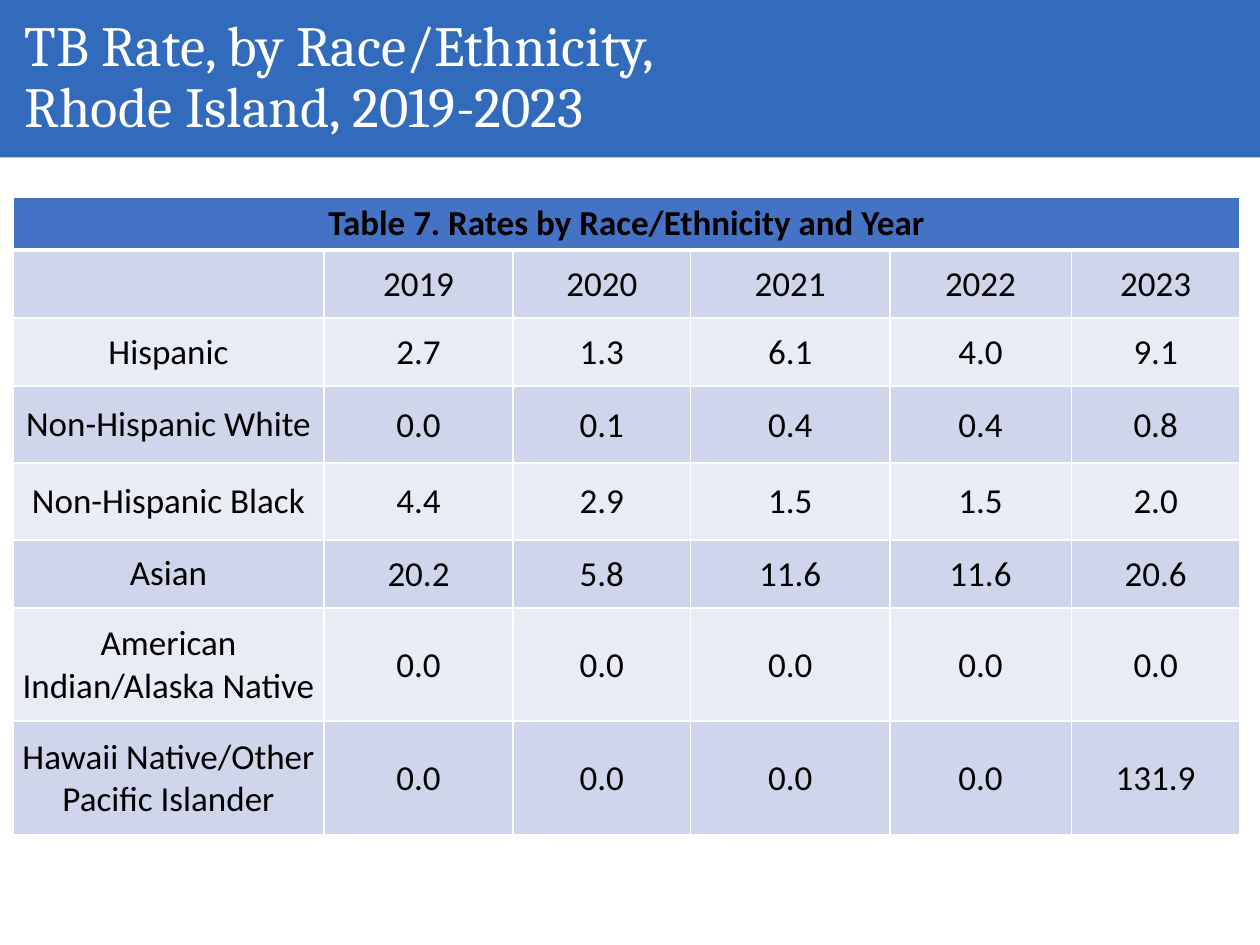
from pptx import Presentation
from pptx.dml.color import RGBColor
from pptx.enum.shapes import MSO_SHAPE
from pptx.enum.text import MSO_ANCHOR, MSO_AUTO_SIZE, PP_ALIGN
from pptx.oxml.ns import qn
from pptx.util import Pt
from lxml import etree

RECTANGLE = MSO_SHAPE.RECTANGLE
MIDDLE = MSO_ANCHOR.MIDDLE
NO_AUTOFIT = MSO_AUTO_SIZE.NONE
LEFT, CENTER = PP_ALIGN.LEFT, PP_ALIGN.CENTER

SLIDE_WIDTH, SLIDE_HEIGHT = 720, 540
TITLE_ONLY = 5
COLORS = {
    "band": "326ABC",
    "title": "FFFFFF",
    "header": "4472C4",
    "odd_row": "CFD5EA",
    "even_row": "E9EBF5",
    "text": "000000",
    "border": "FFFFFF",
}
TITLE_FORMAT = {"name": "Cambria", "size": Pt(32.4), "bold": False}
CELL_FORMAT = {"name": "Calibri", "size": Pt(20), "bold": False}
HEADER_FORMAT = {**CELL_FORMAT, "bold": True}

# Cell margins: left, top, right, bottom
ROOMY = (5.4, 2.7, 5.4, 2.7)
TIGHT = (0.75, 0.75, 0.75, 0)

TABLE_TITLE = "Table 7. Rates by Race/Ethnicity and Year"
YEARS = ["2019", "2020", "2021", "2022", "2023"]
RATES = {
    "Hispanic": [2.7, 1.3, 6.1, 4.0, 9.1],
    "Non-Hispanic White": [0.0, 0.1, 0.4, 0.4, 0.8],
    "Non-Hispanic Black": [4.4, 2.9, 1.5, 1.5, 2.0],
    "Asian": [20.2, 5.8, 11.6, 11.6, 20.6],
    "American Indian/Alaska Native": [0.0, 0.0, 0.0, 0.0, 0.0],
    "Hawaii Native/Other Pacific Islander": [0.0, 0.0, 0.0, 0.0, 131.9],
}
COLUMN_WIDTHS = [177.8, 108, 101.5, 113.8, 103.7, 96.5]
ROW_HEIGHTS = [17.3, 38.9, 38.9, 43.9, 43.9, 38.9, 64.8, 64.8]


class RateSlide:
    """Holds the slide and the style of its elements."""

    def __init__(self, presentation):
        self.slide = presentation.slides.add_slide(
            presentation.slide_layouts[TITLE_ONLY])

    def color(self, key):
        return RGBColor.from_string(COLORS[key])

    def style_runs(self, paragraph, formats, color):
        for run in paragraph.runs:
            for name, value in formats.items():
                setattr(run.font, name, value)
            run.font.color.rgb = self.color(color)

    def title_band(self, height):
        """Draw the full-width band behind the title."""
        band = self.slide.shapes.add_shape(
            RECTANGLE, 0, 0, Pt(SLIDE_WIDTH), Pt(height))
        band.shadow.inherit = False
        band.fill.solid()
        band.fill.fore_color.rgb = self.color("band")
        band.line.fill.background()
        self.slide.shapes.title.element.addprevious(band.element)

    def title(self, text, left, top, width, height):
        title = self.slide.shapes.title
        title.left, title.top = Pt(left), Pt(top)
        title.width, title.height = Pt(width), Pt(height)
        frame = title.text_frame
        frame.text = text
        frame.auto_size = NO_AUTOFIT
        frame.word_wrap = True
        frame.vertical_anchor = MIDDLE
        heading = frame.paragraphs[0]
        heading.alignment = LEFT
        heading.line_spacing = 0.9
        self.style_runs(heading, TITLE_FORMAT, "title")

    def borders(self, cell, widths):
        """Add white cell borders; must run before the cell is filled."""
        properties = cell._tc.get_or_add_tcPr()
        for side, width in widths.items():
            line = etree.SubElement(properties, qn(f"a:ln{side}"), w=str(Pt(width)))
            fill = etree.SubElement(line, qn("a:solidFill"))
            etree.SubElement(fill, qn("a:srgbClr"), val=COLORS["border"])

    def cell(self, cell, text, fill, margins, formats, border_widths):
        self.borders(cell, border_widths)
        cell.fill.solid()
        cell.fill.fore_color.rgb = self.color(fill)
        cell.vertical_anchor = MIDDLE
        for side, margin in zip(("left", "top", "right", "bottom"), margins):
            setattr(cell, f"margin_{side}", Pt(margin))
        if text:
            cell.text = text
            label = cell.text_frame.paragraphs[0]
            label.alignment = CENTER
            self.style_runs(label, formats, "text")

    def rate_table(self, rows, left, top):
        table = self.slide.shapes.add_table(
            len(rows), len(COLUMN_WIDTHS), Pt(left), Pt(top),
            Pt(sum(COLUMN_WIDTHS)), Pt(sum(ROW_HEIGHTS))).table
        for column, width in zip(table.columns, COLUMN_WIDTHS):
            column.width = Pt(width)
        for row, height in zip(table.rows, ROW_HEIGHTS):
            row.height = Pt(height)
        table.cell(0, 0).merge(table.cell(0, len(COLUMN_WIDTHS) - 1))

        two_line_start = len(rows) - 2
        for r, row in enumerate(rows):
            fill = "header" if r == 0 else "odd_row" if r % 2 else "even_row"
            formats = HEADER_FORMAT if r == 0 else CELL_FORMAT
            widths = {"L": 1, "R": 1, "T": 3 if r == 1 else 1,
                      "B": 3 if r == 0 else 1}
            for c, text in enumerate(row):
                roomy = r < 2 or (c == 0 and r < two_line_start)
                self.cell(table.cell(r, c), text, fill,
                          ROOMY if roomy else TIGHT, formats, widths)


def main():
    presentation = Presentation()
    presentation.slide_width = Pt(SLIDE_WIDTH)
    presentation.slide_height = Pt(SLIDE_HEIGHT)

    page = RateSlide(presentation)
    page.title_band(90)
    page.title("TB Rate, by Race/Ethnicity, \vRhode Island, 2019-2023",
               7, 8, 665, 74)
    rows = [[TABLE_TITLE] + [""] * len(YEARS), [""] + YEARS]
    rows += [[group] + [f"{rate:.1f}" for rate in rates]
             for group, rates in RATES.items()]
    page.rate_table(rows, 7.4, 113)
    presentation.save("out.pptx")


if __name__ == "__main__":
    main()
